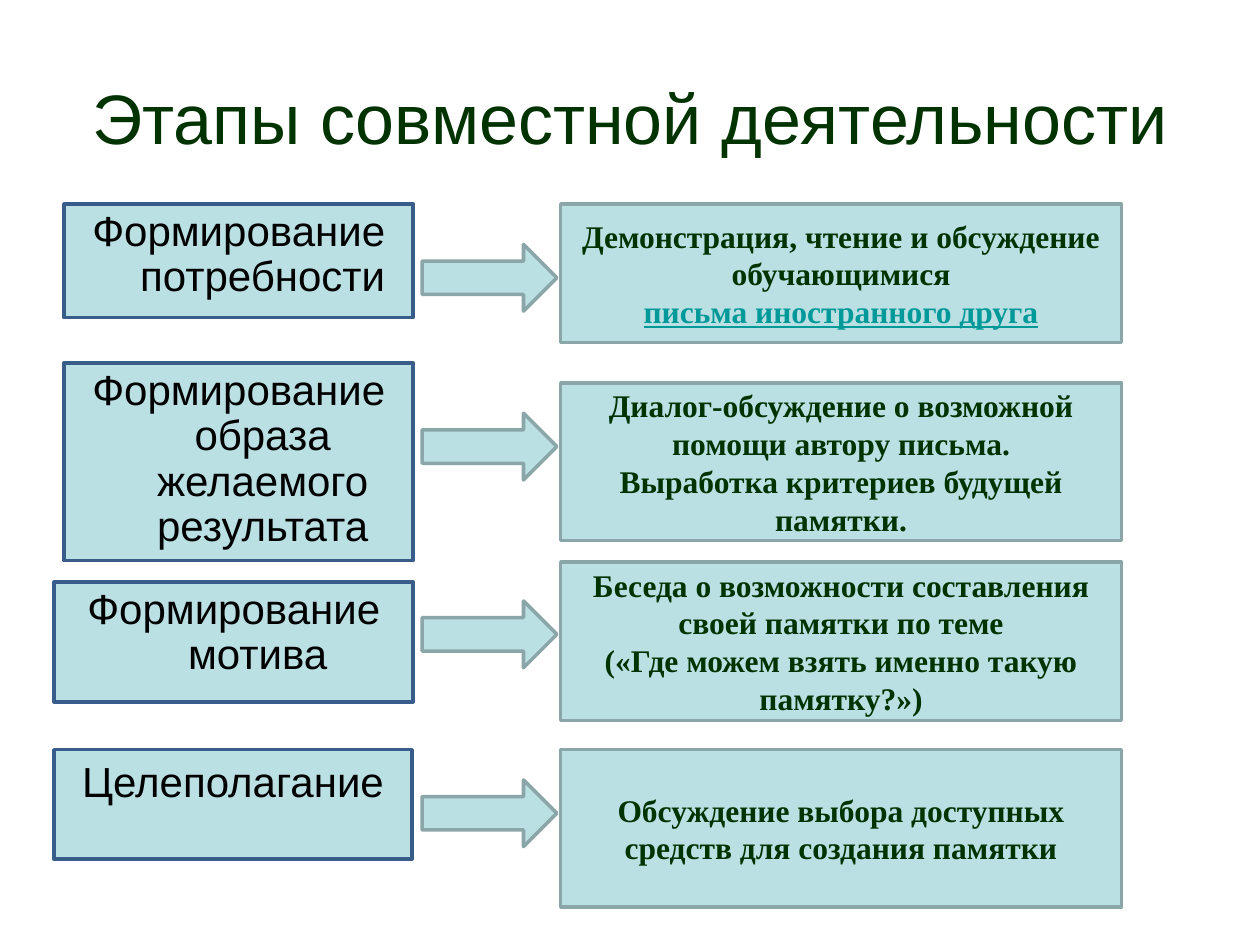
import pptx
import pptx.dml.color
import pptx.enum.shapes
import pptx.enum.text
import pptx.util

Inches = pptx.util.Inches
Anchor = pptx.enum.text.MSO_ANCHOR
Preset = pptx.enum.shapes.MSO_SHAPE

COLORS = {
    "fill": "BBE0E3",
    "stage_line": "385D8A",
    "action_line": "8AA6A8",
    "dark": "003300",
    "black": "000000",
    "link": "009999",
}
TITLE = "Этапы совместной деятельности"
LINK_TEXT = "письма иностранного друга"

# Each box is (top, height); stages also carry left, width and line spacing.
STAGES = [
    ("Формирование потребности", 0.51, 1.62, 2.77, 0.9, 0.9),
    ("Формирование образа желаемого результата", 0.51, 2.88, 2.77, 1.57, 0.9),
    ("Формирование мотива", 0.43, 4.62, 2.85, 0.95, 0.9),
    ("Целеполагание", 0.43, 5.95, 2.84, 0.87, 1.0),
]
ACTIONS = [
    (["Демонстрация, чтение и обсуждение обучающимися", LINK_TEXT], 1.62, 1.1),
    (["Диалог-обсуждение о возможной помощи автору письма.",
      "Выработка критериев будущей памятки."], 3.04, 1.25),
    (["Беседа о возможности составления своей памятки по теме",
      "(«Где можем взять именно такую памятку?»)"], 4.46, 1.26),
    (["Обсуждение выбора доступных средств для создания памятки"], 5.95, 1.25),
]
ARROW_TOPS = [1.94, 3.28, 4.77, 6.19]
ARROW_LEFT, ARROW_WIDTH, ARROW_HEIGHT = 3.35, 1.07, 0.53
ACTION_LEFT = ACTION_WIDTH = 4.45
HANGING = Inches(0.38)

TITLE_FONT = {"name": "Arial", "size": pptx.util.Pt(40), "bold": False}
STAGE_FONT = {"name": "Arial", "size": pptx.util.Pt(24)}
ACTION_FONT = {"name": "Times New Roman", "size": pptx.util.Pt(18), "bold": True}
LINK_FONT = {**ACTION_FONT, "underline": True}


def rgb(name):
    return pptx.dml.color.RGBColor.from_string(COLORS[name])


def add_box(slide, preset, box, line):
    shape = slide.shapes.add_shape(preset, *map(Inches, box))
    shape.shadow.inherit = False
    shape.fill.solid()
    shape.fill.fore_color.rgb = rgb("fill")
    shape.line.color.rgb = rgb(line)
    shape.line.width = pptx.util.Pt(2)
    return shape


def write(shape, texts, anchor, formats):
    """Fill a shape with centred paragraphs; formats pairs each with (font, color)."""
    frame = shape.text_frame
    frame.word_wrap = True
    frame.vertical_anchor = anchor
    frame.text = "\n".join(texts)
    for paragraph, (font, color) in zip(frame.paragraphs, formats):
        paragraph.alignment = pptx.enum.text.PP_ALIGN.CENTER
        run_font = paragraph.runs[0].font
        for attribute, value in font.items():
            setattr(run_font, attribute, value)
        run_font.color.rgb = rgb(color)
    return frame.paragraphs


def main():
    presentation = pptx.Presentation()
    presentation.slide_width = Inches(10)
    presentation.slide_height = Inches(7.5)
    slide = presentation.slides.add_slide(presentation.slide_layouts[5])

    title = slide.shapes.title
    title.left, title.top, title.width, title.height = map(Inches, (0.5, 0.3, 9, 1.25))
    write(title, [TITLE], Anchor.MIDDLE, [(TITLE_FONT, "dark")])

    for stage, arrow_top, action in zip(STAGES, ARROW_TOPS, ACTIONS):
        text, left, top, width, height, spacing = stage
        box = add_box(slide, Preset.RECTANGLE, (left, top, width, height), "stage_line")
        paragraph = write(box, [text], Anchor.TOP, [(STAGE_FONT, "black")])[0]
        paragraph.line_spacing = spacing
        properties = paragraph._p.get_or_add_pPr()
        properties.set("marL", str(HANGING))
        properties.set("indent", str(-HANGING))

        add_box(slide, Preset.RIGHT_ARROW,
                (ARROW_LEFT, arrow_top, ARROW_WIDTH, ARROW_HEIGHT), "action_line")

        texts, top, height = action
        box = add_box(slide, Preset.RECTANGLE,
                      (ACTION_LEFT, top, ACTION_WIDTH, height), "action_line")
        formats = [(LINK_FONT, "link") if text == LINK_TEXT else (ACTION_FONT, "dark")
                   for text in texts]
        write(box, texts, Anchor.MIDDLE, formats)

    presentation.save("out.pptx")


if __name__ == "__main__":
    main()
